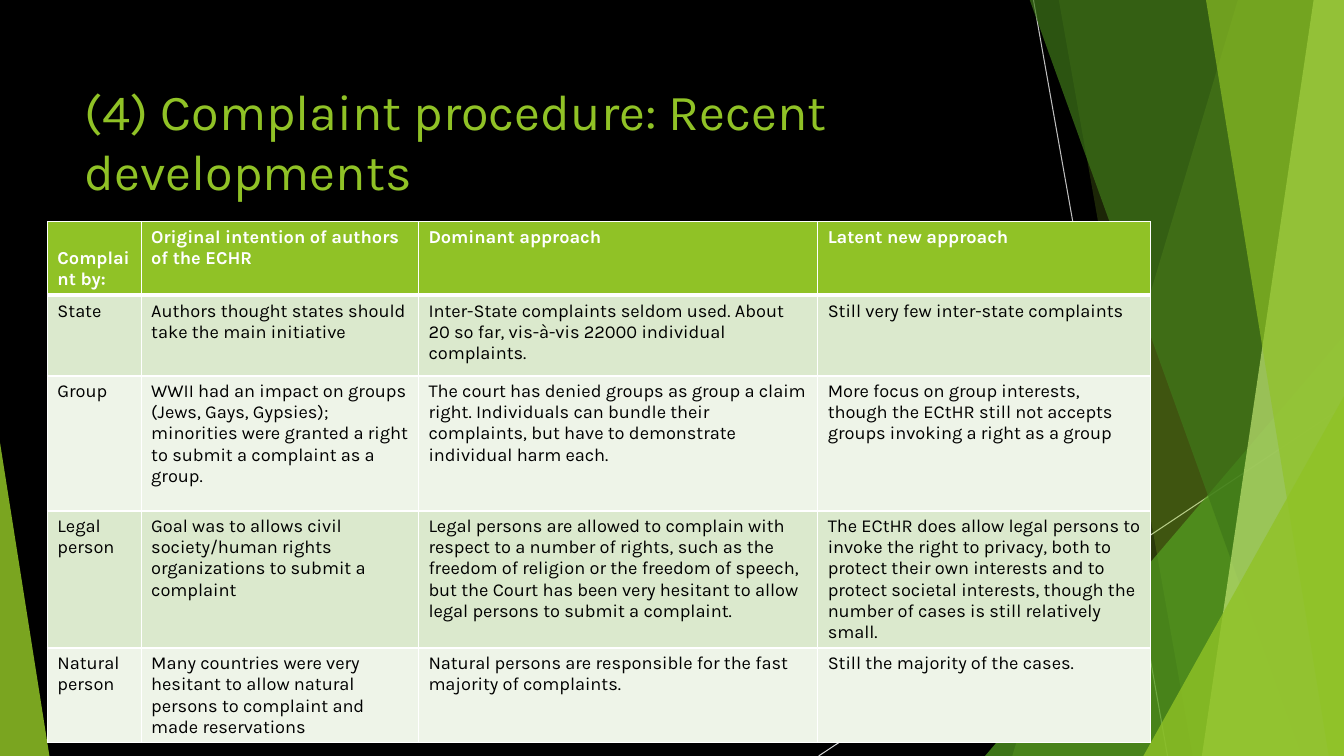
from lxml import etree
from pptx import Presentation
from pptx.dml.color import RGBColor
from pptx.enum import shapes, text
from pptx.oxml import ns
from pptx.util import Inches, Pt

FONT = "Karla"
GREEN, WHITE, BLACK = "90C226", "FFFFFF", "000000"
BANDS = ["DBE9CD", "EEF4E8"]
SLIDE_WIDTH, SLIDE_HEIGHT = 13.33, 7.5

RAYS = [
    ("BFBFBF", 10.25, 0, 11.58, SLIDE_HEIGHT),
    ("D9D9D9", SLIDE_WIDTH, 4.03, 8.12, SLIDE_HEIGHT),
]
# Shards reach the right edge: colour, opacity, x at the top, x at the bottom.
BACK_SHARDS = [(GREEN, 30, 12.28, 10.04), (GREEN, 20, 10.5, 11.83)]
FRONT_SHARDS = [
    ("3F7819", 70, 10.21, 12.91),
    ("C0E474", 70, 13.03, 11.92),
    (GREEN, 65, 11.96, 13.18),
]

COLUMN_WIDTHS = [0.93, 2.75, 3.96, 3.3]
ROW_HEIGHTS = [0.61, 0.8, 1.34, 1.16, 0.8]
COMPLAINTS = [
    ["Complaint by:", "Original intention of authors of the ECHR",
     "Dominant approach", "Latent new approach"],
    ["State", "Authors thought states should take the main initiative",
     "Inter-State complaints seldom used. About 20 so far, vis-à-vis 22000 "
     "individual complaints.",
     "Still very few inter-state complaints"],
    ["Group",
     "WWII had an impact on groups (Jews, Gays, Gypsies); minorities were "
     "granted a right to submit a complaint as a group.",
     "The court has denied groups as group a claim right. Individuals can "
     "bundle their complaints, but have to demonstrate individual harm each.",
     "More focus on group interests, though the ECtHR still not accepts "
     "groups invoking a right as a group"],
    ["Legal person",
     "Goal was to allows civil society/human rights organizations to submit "
     "a complaint",
     "Legal persons are allowed to complain with respect to a number of "
     "rights, such as the freedom of religion or the freedom of speech, but "
     "the Court has been very hesitant to allow legal persons to submit a "
     "complaint.",
     "The ECtHR does allow legal persons to invoke the right to privacy, "
     "both to protect their own interests and to protect societal interests, "
     "though the number of cases is still relatively small."],
    ["Natural person",
     "Many countries were very hesitant to allow natural persons to "
     "complaint and made reservations",
     "Natural persons are responsible for the fast majority of complaints.",
     "Still the majority of the cases."],
]


def paint(fill, color):
    fill.solid()
    fill.fore_color.rgb = RGBColor.from_string(color)


def write(frame, words, size, color, bold=False):
    frame.text = words
    font = frame.paragraphs[0].runs[0].font
    font.name, font.size, font.bold = FONT, Pt(size), bold
    font.color.rgb = RGBColor.from_string(color)


def finish_glass(shape, color, opacity):
    """Give a shape a see-through fill with no line or shadow."""
    shape.shadow.inherit = False
    shape.line.fill.background()
    paint(shape.fill, color)
    tint = shape.element.spPr.find(ns.qn("a:solidFill"))[0]
    etree.SubElement(tint, ns.qn("a:alpha"), val=str(opacity * 1000))


def add_ray(slide, color, x1, y1, x2, y2):
    ray = slide.shapes.add_connector(
        shapes.MSO_CONNECTOR.STRAIGHT,
        Inches(x1), Inches(y1), Inches(x2), Inches(y2))
    ray.line.width = Pt(0.75)
    ray.line.color.rgb = RGBColor.from_string(color)
    etree.SubElement(ray.element.spPr, ns.qn("a:effectLst"))


def add_shard(slide, color, opacity, top_x, bottom_x):
    top, right, bottom = Inches(-0.01), Inches(SLIDE_WIDTH), Inches(SLIDE_HEIGHT)
    outline = slide.shapes.build_freeform(Inches(top_x), top)
    outline.add_line_segments(
        [(right, top), (right, bottom), (Inches(bottom_x), bottom)])
    finish_glass(outline.convert_to_shape(), color, opacity)


def add_corner(slide, color, opacity, left, top, width, apex):
    """Add a triangle that stands on the bottom edge of the slide."""
    corner = slide.shapes.add_shape(
        shapes.MSO_SHAPE.ISOSCELES_TRIANGLE, Inches(left), Inches(top),
        Inches(width), Inches(SLIDE_HEIGHT - top))
    corner.adjustments[0] = apex
    finish_glass(corner, color, opacity)


def add_backdrop(slide):
    paint(slide.background.fill, BLACK)
    for ray in RAYS:
        add_ray(slide, *ray)
    for shard in BACK_SHARDS:
        add_shard(slide, *shard)
    add_corner(slide, "54A021", 72, 9.77, 3.33, 3.56, 1)
    for shard in FRONT_SHARDS:
        add_shard(slide, *shard)
    add_corner(slide, GREEN, 80, 11.34, 3.93, 1.99, 1)
    add_corner(slide, GREEN, 85, 0, 4.39, 0.49, 0)


def set_title(slide, words):
    title = slide.shapes.title
    title.left, title.top = Inches(0.74), Inches(0.67)
    title.width, title.height = Inches(9.4), Inches(1.44)
    write(title.text_frame, words, 36, GREEN)
    title.text_frame.vertical_anchor = text.MSO_ANCHOR.MIDDLE
    title.text_frame.paragraphs[0].alignment = text.PP_ALIGN.LEFT


def set_borders(cell, top, bottom):
    properties = cell._tc.get_or_add_tcPr()
    for side, points in (("L", 1), ("R", 1), ("T", top), ("B", bottom)):
        edge = etree.SubElement(
            properties, ns.qn(f"a:ln{side}"), w=str(Pt(points)))
        solid = etree.SubElement(edge, ns.qn("a:solidFill"))
        etree.SubElement(solid, ns.qn("a:srgbClr"), val=WHITE)


def add_complaint_table(slide):
    table = slide.shapes.add_table(
        len(COMPLAINTS), len(COLUMN_WIDTHS), Inches(0.47), Inches(2.2),
        Inches(sum(COLUMN_WIDTHS)), Inches(sum(ROW_HEIGHTS))).table
    for column, width in zip(table.columns, COLUMN_WIDTHS):
        column.width = Inches(width)
    for index, (row, height) in enumerate(zip(table.rows, ROW_HEIGHTS)):
        row.height = Inches(height)
        header = index == 0
        for cell, words in zip(row.cells, COMPLAINTS[index]):
            write(cell.text_frame, words, 13, WHITE if header else BLACK, header)
            set_borders(cell, 3 if index == 1 else 1, 3 if header else 1)
            paint(cell.fill, GREEN if header else BANDS[(index - 1) % 2])
    table.cell(0, 0).margin_top = Inches(0.26)


def main():
    deck = Presentation()
    deck.slide_width, deck.slide_height = Inches(SLIDE_WIDTH), Inches(SLIDE_HEIGHT)
    slide = deck.slides.add_slide(deck.slide_layouts.get_by_name("Title Only"))
    add_backdrop(slide)
    set_title(slide, "(4) Complaint procedure: Recent developments")
    add_complaint_table(slide)
    deck.save("out.pptx")


if __name__ == "__main__":
    main()
